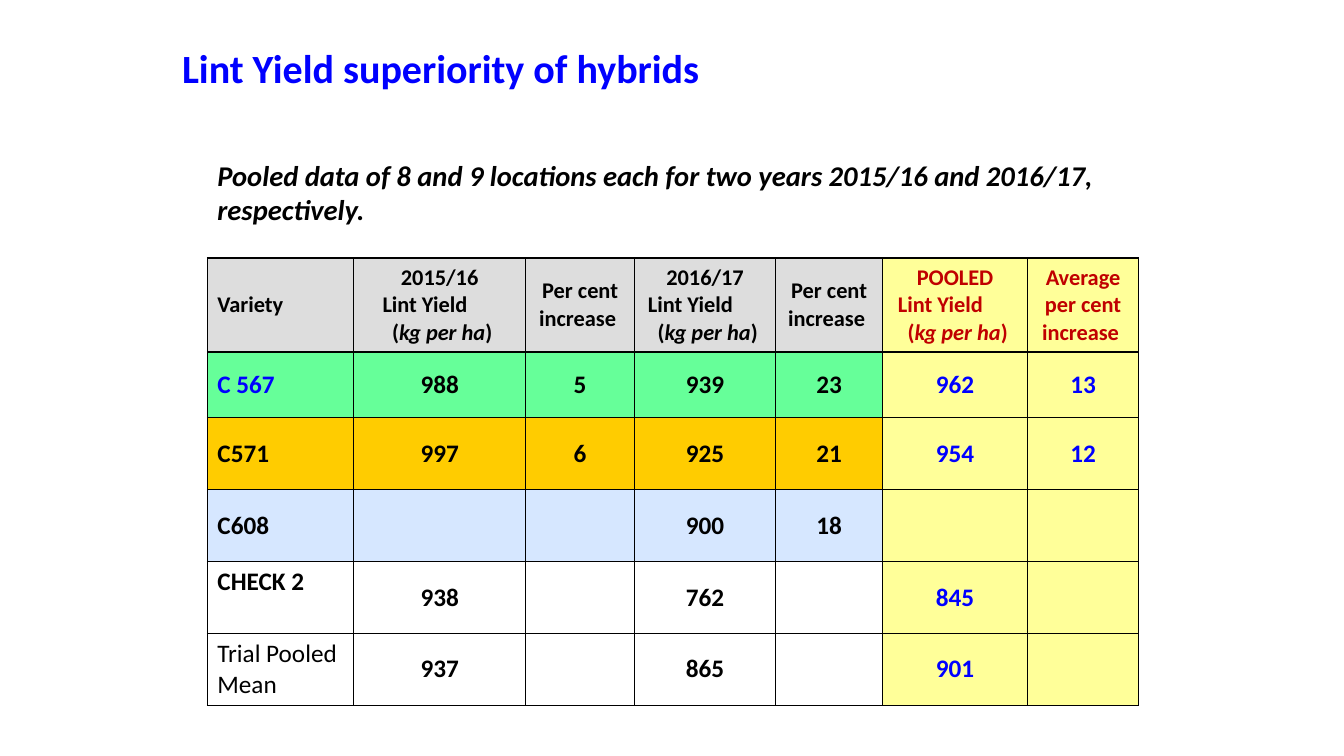
from pptx import Presentation
from pptx.util import Cm, Pt
from pptx.dml.color import RGBColor
from pptx.enum.text import MSO_ANCHOR, PP_ALIGN
from pptx.oxml import parse_xml
from pptx.oxml.ns import nsdecls

HUES = {"blue": "0000FF", "black": "000000", "red": "C00000", "grey": "DDDDDD",
        "green": "66FF99", "gold": "FFCC00", "pale": "D6E7FF", "yellow": "FFFF99"}
TITLE = "Lint Yield superiority of hybrids"
NOTE = ("Pooled data of 8 and 9 locations each for two years "
        "2015/16 and 2016/17, respectively.")
LINT, UNIT = "Lint Yield", "kg per ha"
HEADS = [["Variety"], ["2015/16", LINT, UNIT], ["Per cent increase "],
         ["2016/17", LINT, UNIT], ["Per cent increase "],
         ["POOLED", LINT, UNIT], ["Average", "per cent increase "]]
ROWS = [("green", ["C 567", "988", "5", "939", "23", "962", "13"]),
        ("gold", ["C571", "997", "6", "925", "21", "954", "12"]),
        ("pale", ["C608", "", "", "900", "18", "", ""]),
        (None, ["CHECK 2", "938", "", "762", "", "845", ""]),
        (None, ["Trial Pooled Mean", "937", "", "865", "", "901", ""])]
WIDTHS = [3.68, 4.34, 2.74, 3.56, 2.69, 3.66, 2.79]
HEIGHTS = [2.37, 1.66] + [1.81] * 4
LEFT, WIDE, POOL = 5.23, 23.44, 5
LINTW = 3.38


def style(para, size, hue, bold=True, slant=False):
    """Set the font of a whole paragraph."""
    font = para.font
    font.name, font.size, font.bold, font.italic = "Calibri", Pt(size), bold, slant
    font.color.rgb = RGBColor.from_string(HUES[hue])


def label(slide, box, text, size, hue, wrap, slant=False):
    """Add a one-paragraph text box."""
    frame = slide.shapes.add_textbox(*map(Cm, box)).text_frame
    frame.word_wrap = wrap
    frame.vertical_anchor = MSO_ANCHOR.TOP if wrap else MSO_ANCHOR.MIDDLE
    frame.text = text
    style(frame.paragraphs[0], size, hue, slant=slant)


def paint(cell, hue):
    """Give a cell its borders, fill, margins and anchor."""
    props = cell._tc.get_or_add_tcPr()
    for side in "LRTB":
        props.append(parse_xml(
            f'<a:ln{side} {nsdecls("a")} w="12700"><a:solidFill>'
            f'<a:srgbClr val="{HUES["black"]}"/></a:solidFill></a:ln{side}>'))
    if hue:
        cell.fill.solid()
        cell.fill.fore_color.rgb = RGBColor.from_string(HUES[hue])
    else:
        cell.fill.background()
    cell.margin_left = cell.margin_right = Cm(0.25)
    cell.margin_top = cell.margin_bottom = Cm(0.13)
    cell.vertical_anchor = MSO_ANCHOR.MIDDLE


def write(cell, lines, col, size, hue, bold=True):
    """Write lines into a cell, one paragraph each."""
    frame = cell.text_frame
    for i, line in enumerate(lines):
        para = frame.add_paragraph() if i else frame.paragraphs[0]
        para.alignment = PP_ALIGN.CENTER if col else PP_ALIGN.LEFT
        if line == LINT:
            para.alignment = PP_ALIGN.LEFT
            indent = Cm((WIDTHS[col] - LINTW) / 2)
            para._p.get_or_add_pPr().set("marL", str(indent))
        style(para, size, hue, bold)
        for part in (" (", UNIT, ")") if line == UNIT else (line,):
            run = para.add_run()
            run.text = part
            if part == UNIT:
                run.font.italic = True


def main():
    """Build the lint yield slide."""
    deck = Presentation()
    deck.slide_width, deck.slide_height = Cm(33.87), Cm(19.05)
    slide = deck.slides.add_slide(deck.slide_layouts[6])
    label(slide, (4.34, 0.97, 14.02, 1.47), TITLE, 28.6, "blue", False)
    table = slide.shapes.add_table(
        len(HEIGHTS), len(WIDTHS), Cm(LEFT), Cm(6.5), Cm(WIDE), Cm(sum(HEIGHTS))).table
    table.first_row = table.horz_banding = False
    for col, width in zip(table.columns, WIDTHS):
        col.width = Cm(width)
    for row, height in zip(table.rows, HEIGHTS):
        row.height = Cm(height)
    for c, lines in enumerate(HEADS):
        cell = table.cell(0, c)
        paint(cell, "yellow" if c >= POOL else "grey")
        write(cell, lines, c, 16, "red" if c >= POOL else "black")
    for r, (fill, texts) in enumerate(ROWS, 1):
        for c, text in enumerate(texts):
            cell = table.cell(r, c)
            paint(cell, "yellow" if c >= POOL else fill)
            hue = "blue" if c >= POOL or text == "C 567" else "black"
            if text:
                write(cell, [text], c, 18, hue, not text.startswith("Trial"))
            if text == "CHECK 2":
                cell.vertical_anchor = MSO_ANCHOR.TOP
    label(slide, (LEFT, 3.86, WIDE, 2.03), NOTE, 20.4, "black", True, True)
    deck.save("out.pptx")


if __name__ == "__main__":
    main()
